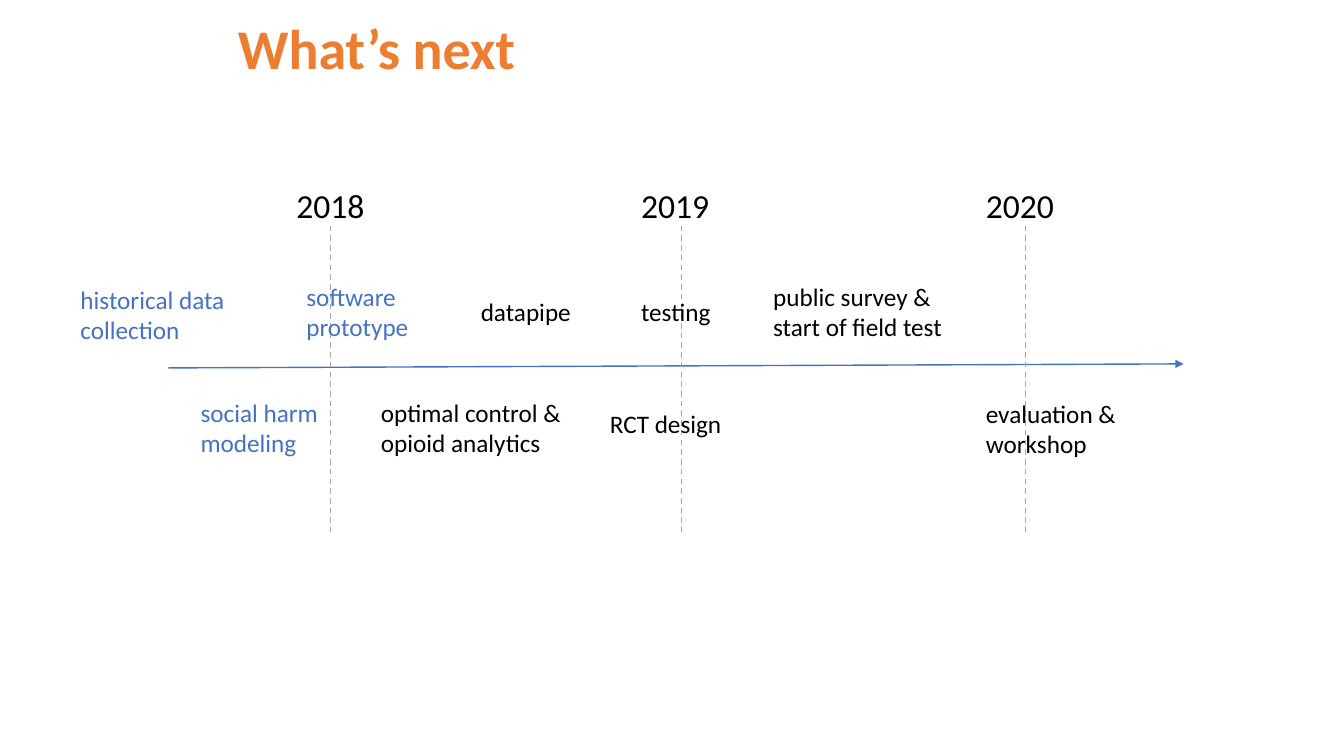
from lxml.etree import SubElement
from pptx import Presentation
from pptx.dml.color import RGBColor
from pptx.enum.dml import MSO_LINE
from pptx.enum.shapes import MSO_CONNECTOR
from pptx.enum.text import MSO_ANCHOR, MSO_AUTO_SIZE, PP_ALIGN
from pptx.oxml.ns import qn
from pptx.util import Emu, Pt

COLORS = {"title": "ED7D31", "done": "4472C4", "planned": "000000", "year": "A6A6A6"}
FONT = "Calibri"
YEARS = [("2018", 328), ("2019", 676), ("2020", 1017)]
YEAR_LEFT, YEAR_STEP = 284, 342
MILESTONES = [
    (70, 277, 193, ["historical data", "collection"], "done"),
    (294, 274, 139, ["software", "prototype"], "done"),
    (467, 289, 139, ["datapipe"], "planned"),
    (626, 289, 139, ["testing"], "planned"),
    (757, 274, 190, ["public survey &", "start of field test"], "planned"),
    (189, 389, 139, ["social harm", "modeling"], "done"),
    (368, 389, 296, ["optimal control &", "opioid analytics"], "planned"),
    (595, 400, 139, ["RCT design"], "planned"),
    (968, 390, 170, ["evaluation &", "workshop"], "planned"),
]


def px(length):
    """Turn px, at 100 to the inch, into EMU."""
    return Emu(length * 9144)


def add_run(paragraph, text, size, color, bold=False):
    """Add one formatted run to a paragraph."""
    run = paragraph.add_run()
    run.text = text
    run.font.name = FONT
    run.font.size = Pt(size)
    run.font.bold = bold
    run.font.color.rgb = RGBColor.from_string(COLORS[color])


def add_title(slide, text):
    """Place and fill the title placeholder."""
    title = slide.shapes.title
    title.left, title.top, title.width, title.height = map(px, (226, 5, 877, 83))
    title.text_frame.vertical_anchor = MSO_ANCHOR.MIDDLE
    heading = title.text_frame.paragraphs[0]
    heading.alignment = PP_ALIGN.LEFT
    add_run(heading, text, 40, "title", bold=True)


def add_label(slide, left, top, width, height, lines, size, color, wrap=True):
    """Add a text box with one paragraph per line."""
    frame = slide.shapes.add_textbox(*map(px, (left, top, width, height))).text_frame
    frame.word_wrap = wrap
    frame.auto_size = MSO_AUTO_SIZE.SHAPE_TO_FIT_TEXT
    for index, line in enumerate(lines):
        paragraph = frame.add_paragraph() if index else frame.paragraphs[0]
        add_run(paragraph, line, size, color)


def add_line(slide, start, end, color, dash=None, arrow=False):
    """Add a thin line, dashed or with an arrowhead if asked."""
    connector = slide.shapes.add_connector(
        MSO_CONNECTOR.STRAIGHT, *map(px, (*start, *end)))
    connector.line.color.rgb = RGBColor.from_string(COLORS[color])
    connector.line.width = Pt(1)
    if dash:
        connector.line.dash_style = dash
    if arrow:
        SubElement(connector.line._get_or_add_ln(), qn("a:tailEnd"), type="triangle")
    SubElement(connector._element.spPr, qn("a:effectLst"))


def main():
    """Build the timeline slide."""
    deck = Presentation()
    deck.slide_width, deck.slide_height = px(1333), px(750)
    slide = deck.slides.add_slide(deck.slide_layouts[5])
    add_title(slide, "What’s next")
    add_line(slide, (167, 365), (1174, 361), "done", arrow=True)
    for index, (year, marker) in enumerate(YEARS):
        add_label(slide, YEAR_LEFT + index * YEAR_STEP, 179, 88, 50,
                  [year], 24, "planned", wrap=False)
        add_line(slide, (marker, 224), (marker, 528), "year", dash=MSO_LINE.DASH)
    for left, top, width, lines, status in MILESTONES:
        add_label(slide, left, top, width, 10 + 30 * len(lines), lines, 18, status)
    deck.save("out.pptx")


if __name__ == "__main__":
    main()
